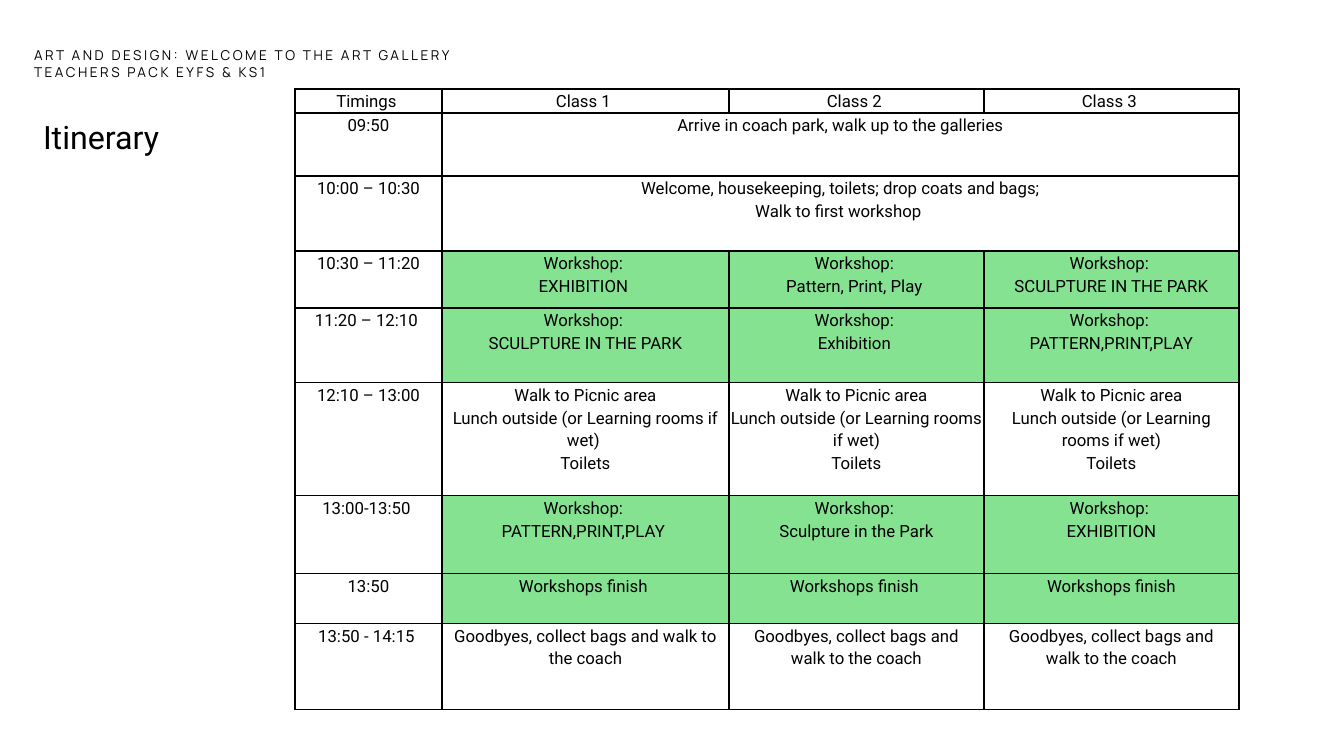
import pptx
import pptx.dml.color
import pptx.enum.text
import pptx.util
from lxml import etree
from pptx.oxml.ns import qn

EMU_PER_PX = 914400 / 100.8
BLACK, WHITE, GREEN = "000000", "FFFFFF", "84E291"
CENTER = pptx.enum.text.PP_ALIGN.CENTER
MIDDLE = pptx.enum.text.MSO_ANCHOR.MIDDLE

LUNCH = "Walk to Picnic area\nLunch outside (or Learning rooms if wet)\nToilets"
GOODBYE = "Goodbyes, collect bags and walk to the coach"
COLUMN_WIDTHS = [147, 287, 255, 255]
# Height, fill of the class cells, timing, then one text per class or one for all.
# A row without timing continues the row above it.
ITINERARY = [
    (24, WHITE, "Timings ", ["Class 1 ", "Class 2 ", "Class 3 "]),
    (63, WHITE, "09:50", ["Arrive in coach park, walk up to the galleries"]),
    (75, WHITE, "10:00 – 10:30",
     ["Welcome, housekeeping, toilets; drop coats and bags;\nWalk to first workshop "]),
    (57, GREEN, "10:30 – 11:20",
     ["Workshop: \nEXHIBITION ", "Workshop: \nPattern, Print, Play ",
      "Workshop: \nSCULPTURE IN THE PARK"]),
    (75, GREEN, "11:20 – 12:10 ",
     ["Workshop: \nSCULPTURE IN THE PARK", "Workshop: \nExhibition ",
      "Workshop: \nPATTERN,PRINT,PLAY"]),
    (113, WHITE, "12:10 – 13:00", [LUNCH.replace("wet)", "wet) "), LUNCH, LUNCH]),
    (55, GREEN, "13:00-13:50 ",
     ["Workshop: \nPATTERN,PRINT,PLAY ", "Workshop: \nSculpture in the Park",
      "Workshop: \nEXHIBITION"]),
    (23, GREEN, "", [""] * 3),
    (50, GREEN, "13:50", ["Workshops finish ", "Workshops finish ", "Workshops finish"]),
    (86, WHITE, "13:50 - 14:15 ", [GOODBYE] * 3),
]


def px(n):
    return pptx.util.Emu(round(n * EMU_PER_PX))


def color(value):
    return pptx.dml.color.RGBColor.from_string(value)


def add_lines(tf, text, font, size, align=None, line_spacing=None, before=0, tracking=0):
    """Write each line of text as a paragraph; tracking is in hundredths of a point."""
    for i, line in enumerate(text.split("\n")):
        p = tf.paragraphs[0] if i == 0 else tf.add_paragraph()
        p.alignment = align
        p.line_spacing = line_spacing
        p.space_before = pptx.util.Pt(before)
        if not line:
            etree.SubElement(p._p, qn("a:endParaRPr"), sz=str(size * 100))
            continue
        r = p.add_run()
        r.text = line
        r.font.name = font
        r.font.size = pptx.util.Pt(size)
        r.font.color.rgb = color(BLACK)
        if tracking:
            r.font._element.set("spc", str(tracking))


def add_textbox(s, left, top, width, height, margins):
    """Add a wrapping text box; margins are left, top, right, bottom."""
    tf = s.shapes.add_textbox(px(left), px(top), px(width), px(height)).text_frame
    tf.word_wrap = True
    tf.margin_left, tf.margin_top, tf.margin_right, tf.margin_bottom = map(px, margins)
    return tf


def set_borders(cell, sides):
    """Draw the sides named by the letters L, R, T, B and clear the others."""
    tcPr = cell._tc.get_or_add_tcPr()
    for i, side in enumerate("LRTB"):
        ln = etree.Element(qn("a:ln" + side), w=str(pptx.util.Pt(1)))
        if side in sides:
            fill = etree.SubElement(ln, qn("a:solidFill"))
            etree.SubElement(fill, qn("a:srgbClr"), val=BLACK)
        else:
            etree.SubElement(ln, qn("a:noFill"))
        tcPr.insert(i, ln)


def fill_cell(cell, text, background, sides, side_margin=7):
    cell.margin_left = cell.margin_right = px(side_margin)
    cell.margin_top = cell.margin_bottom = 0
    cell.fill.solid()
    cell.fill.fore_color.rgb = color(background)
    set_borders(cell, sides)
    add_lines(cell.text_frame, text, "Roboto", 12, CENTER, 1.15)


def add_itinerary(s, left, top):
    heights = [row[0] for row in ITINERARY]
    table = s.shapes.add_table(
        len(heights), len(COLUMN_WIDTHS), px(left), px(top),
        px(sum(COLUMN_WIDTHS)), px(sum(heights))).table
    table.first_row = table.horz_banding = False
    for column, width in zip(table.columns, COLUMN_WIDTHS):
        column.width = px(width)
    for i, (height, background, timing, classes) in enumerate(ITINERARY):
        table.rows[i].height = px(height)
        continued = i + 1 < len(ITINERARY) and not ITINERARY[i + 1][2]
        sides = "LR" + ("T" if timing else "") + ("" if continued else "B")
        fill_cell(table.cell(i, 0), timing, WHITE, sides)
        if len(classes) == 1:
            table.cell(i, 1).merge(table.cell(i, 3))
            for j in (2, 3):
                set_borders(table.cell(i, j), sides)
        for j, text in enumerate(classes, 1):
            tight = text == LUNCH and j == 2
            fill_cell(table.cell(i, j), text, background, sides, 0 if tight else 7)


def main():
    prs = pptx.Presentation()
    prs.slide_width, prs.slide_height = px(1344), px(756)
    s = prs.slides.add_slide(prs.slide_layouts[6])

    title = add_textbox(s, 33, 97, 213, 84, (10, 5, 10, 5))
    title.vertical_anchor = MIDDLE
    add_lines(title, "Itinerary", "Roboto", 23, line_spacing=0.9)

    add_itinerary(s, 295, 89)

    header = add_textbox(s, 33, 46, 470, 35, (1, 1, 0, 0))
    add_lines(header, "ART AND DESIGN: WELCOME TO THE ART GALLERY\nTEACHERS PACK EYFS & KS1",
              "Manrope", 9.7, before=0.6, tracking=180)

    prs.save("out.pptx")


if __name__ == "__main__":
    main()
